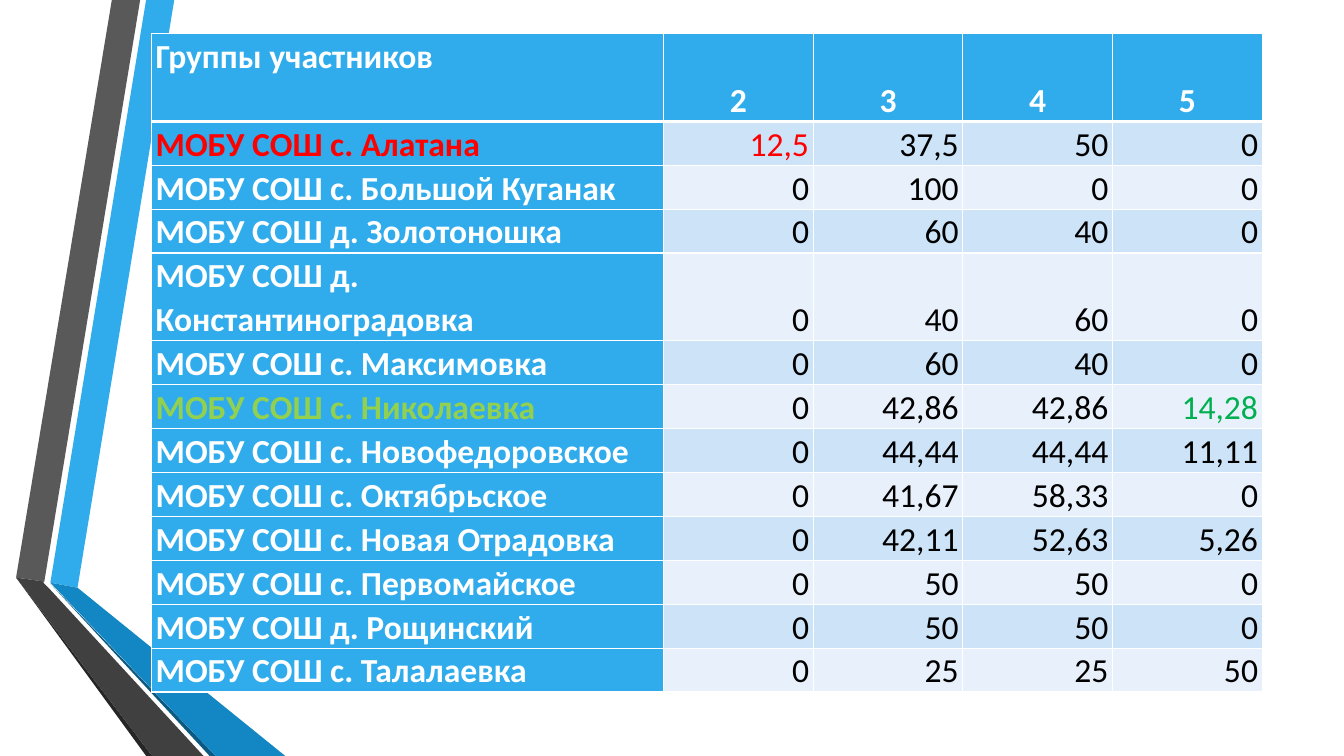
from lxml.etree import SubElement
from pptx import Presentation
from pptx.dml.color import RGBColor
from pptx.enum.text import MSO_ANCHOR, PP_ALIGN
from pptx.oxml.ns import qn
from pptx.util import Pt

COLORS = {
    "blue": "30ACEC", "blue_mid": "1287C3", "blue_dark": "0C5A82",
    "gray": "595959", "gray_mid": "404040", "gray_dark": "262626",
    "band_odd": "CDE3F8", "band_even": "E8F1FB",
    "white": "FFFFFF", "black": "000000",
    "red": "FF0000", "lime": "92D050", "green": "00B050",
}

# Ribbon facets, back to front, in points from the ribbon's top left corner
RIBBONS = [
    ("blue", [(24.5, 416.2), (43.9, 419.8), (113, 0), (92.9, 0)]),
    ("gray", [(88.6, 0), (68.4, 0), (0, 412.6), (20.2, 415.4)]),
    ("gray_dark", [(0, 412.6), (92.9, 540), (97.2, 540)]),
    ("blue_dark", [(24.5, 416.9), (138.3, 540), (142.6, 540)]),
    ("blue_mid", [(24.5, 416.2), (142.6, 540), (192.3, 540), (43.9, 419.8)]),
    ("gray_mid", [(133.9, 540), (23.1, 419.8), (19.5, 416.2), (20.2, 415.4),
                  (0, 412.6), (97.2, 540)]),
]

ROWS = [
    ("Группы участников", "2", "3", "4", "5"),
    ("МОБУ СОШ с. Алатана", "12,5", "37,5", "50", "0"),
    ("МОБУ СОШ с. Большой Куганак", "0", "100", "0", "0"),
    ("МОБУ СОШ д. Золотоношка", "0", "60", "40", "0"),
    ("МОБУ СОШ д. Константиноградовка", "0", "40", "60", "0"),
    ("МОБУ СОШ с. Максимовка", "0", "60", "40", "0"),
    ("МОБУ СОШ с. Николаевка", "0", "42,86", "42,86", "14,28"),
    ("МОБУ СОШ с. Новофедоровское", "0", "44,44", "44,44", "11,11"),
    ("МОБУ СОШ с. Октябрьское", "0", "41,67", "58,33", "0"),
    ("МОБУ СОШ с. Новая Отрадовка", "0", "42,11", "52,63", "5,26"),
    ("МОБУ СОШ с. Первомайское", "0", "50", "50", "0"),
    ("МОБУ СОШ д. Рощинский", "0", "50", "50", "0"),
    ("МОБУ СОШ с. Талалаевка", "0", "25", "25", "50"),
]
TALL_ROWS = {0, 4}
HIGHLIGHTS = {(1, 0): "red", (1, 1): "red", (6, 0): "lime", (6, 4): "green"}


def rgb(name):
    return RGBColor.from_string(COLORS[name])


def add_ribbons(slide, left, top):
    for color, points in RIBBONS:
        corners = [(Pt(left + x), Pt(top + y)) for x, y in points]
        builder = slide.shapes.build_freeform(*corners[0])
        builder.add_line_segments(corners[1:], close=True)
        sp = builder.convert_to_shape()
        sp.shadow.inherit = False
        sp.fill.solid()
        sp.fill.fore_color.rgb = rgb(color)
        sp.line.fill.background()


def set_borders(cell, widths):
    tcPr = cell._tc.get_or_add_tcPr()
    for i, (side, width) in enumerate(widths.items()):
        ln = tcPr.makeelement(qn(f"a:ln{side}"), {"w": str(Pt(width))})
        fill = SubElement(ln, qn("a:solidFill"))
        SubElement(fill, qn("a:srgbClr"), val=COLORS["white"])
        tcPr.insert(i, ln)  # borders precede the fill


def style_cell(cell, text, row, col):
    header, label = row == 0, col == 0
    solid = header or label
    band = "band_odd" if row % 2 else "band_even"
    cell.fill.solid()
    cell.fill.fore_color.rgb = rgb("blue" if solid else band)
    cell.margin_left = cell.margin_right = Pt(3)
    cell.margin_top = cell.margin_bottom = 0
    cell.vertical_anchor = MSO_ANCHOR.TOP if header and label else MSO_ANCHOR.BOTTOM
    set_borders(cell, {"L": 1, "R": 1, "T": 3 if row == 1 else 1, "B": 3 if header else 1})

    cell.text = text
    p = cell.text_frame.paragraphs[0]
    p.line_spacing = 1.07
    if label:
        p.alignment = PP_ALIGN.LEFT
    else:
        p.alignment = PP_ALIGN.CENTER if header else PP_ALIGN.RIGHT
    p.font.name = "Calibri"
    p.font.size = Pt(24)
    p.font.bold = solid
    p.font.color.rgb = rgb(HIGHLIGHTS.get((row, col), "white" if solid else "black"))


def add_results_table(slide, left, top, width, height):
    n_rows, n_cols = len(ROWS), len(ROWS[0])
    table = slide.shapes.add_table(n_rows, n_cols, Pt(left), Pt(top),
                                   Pt(width), Pt(height)).table

    # The label column takes what the equal mark columns leave
    mark_width = 106.9
    table.columns[0].width = Pt(width - mark_width * (n_cols - 1))
    for col in range(1, n_cols):
        table.columns[col].width = Pt(mark_width)

    # Tall rows hold two text lines
    line_height = height / (n_rows + len(TALL_ROWS))
    for row, values in enumerate(ROWS):
        table.rows[row].height = Pt(line_height * (2 if row in TALL_ROWS else 1))
        for col, text in enumerate(values):
            style_cell(table.cell(row, col), text, row, col)


def main():
    prs = Presentation()
    prs.slide_width, prs.slide_height = Pt(960), Pt(540)
    slide = prs.slides.add_slide(prs.slide_layouts[6])
    add_ribbons(slide, 11.5, 0)
    add_results_table(slide, 108.2, 24, 793.4, 470.4)
    prs.save("out.pptx")


if __name__ == "__main__":
    main()
